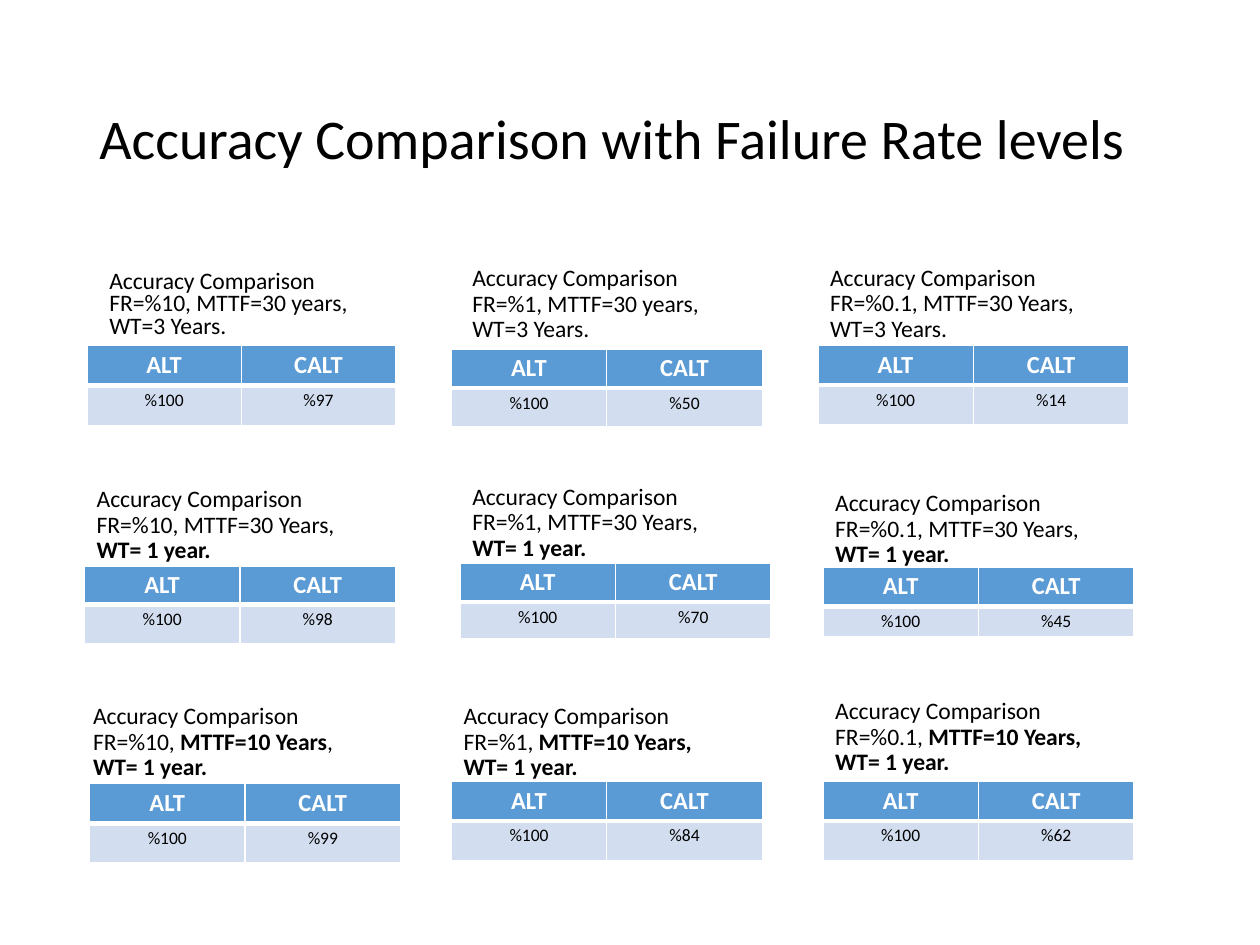
from collections import namedtuple

from lxml.etree import SubElement
from pptx import Presentation
from pptx.dml.color import RGBColor
from pptx.enum.text import MSO_ANCHOR as Anchor, PP_ALIGN as Align
from pptx.oxml.ns import qn
from pptx.util import Pt

FONT = "Calibri"
BLACK, WHITE, HEADER_BLUE, BODY_BLUE = "000000", "FFFFFF", "5B9BD5", "D2DEEF"

Box = namedtuple("Box", "left top width height")
# caption_runs alternate between regular and bold
Comparison = namedtuple(
    "Comparison",
    "caption_runs caption_box table_box calt header_share anchor spacing",
    defaults=(0.5, Anchor.TOP, 0.9))

COMPARISONS = [
    # Top row
    Comparison(["Accuracy Comparison FR=%10, MTTF=30 years, WT=3 Years."],
               Box(55.4, 148.3, 170.6, 49), Box(49.7, 197.3, 176.4, 46),
               "%97", anchor=Anchor.BOTTOM, spacing=0.8),
    Comparison(["Accuracy Comparison FR=%1, MTTF=30 years, WT=3 Years."],
               Box(262.8, 178.6, 157.7, 20.9), Box(257.8, 199.4, 177.8, 44.6),
               "%50", anchor=Anchor.BOTTOM),
    Comparison(["Accuracy Comparison FR=%0.1, MTTF=30 Years, WT=3 Years."],
               Box(467.3, 148.3, 177.8, 45.4), Box(467.3, 197.3, 177.8, 45.4), "%14"),
    # Middle row
    Comparison(["Accuracy Comparison FR=%10, MTTF=30 Years, ", "WT= 1 year."],
               Box(48.2, 275, 177.8, 46.8), Box(48.2, 323.3, 177.8, 44.6), "%98"),
    Comparison(["Accuracy Comparison FR=%1, MTTF=30 Years, ", "WT= 1 year."],
               Box(262.8, 273.6, 163.4, 31), Box(262.8, 321.8, 177.8, 43.5),
               "%70", header_share=0.51),
    Comparison(["Accuracy Comparison FR=%0.1, MTTF=30 Years, ", "WT= 1 year."],
               Box(470.2, 277.2, 177.8, 31), Box(470.2, 324, 177.8, 40),
               "%45", header_share=0.56),
    # Bottom row
    Comparison(["Accuracy Comparison FR=%10, ", "MTTF=10 Years", ", ", "WT= 1 year."],
               Box(46.1, 398.9, 177.8, 33.1), Box(51.1, 447.8, 177.8, 45.4), "%99"),
    Comparison(["Accuracy Comparison FR=%1, ", "MTTF=10 Years, WT= 1 year."],
               Box(257.8, 398.9, 167.8, 33.1), Box(257.8, 446.4, 177.8, 45.4), "%84"),
    Comparison(["Accuracy Comparison FR=%0.1, ", "MTTF=10 Years, WT= 1 year."],
               Box(470.2, 396, 177.8, 33.1), Box(470.2, 446.4, 177.8, 45.4), "%62"),
]


def color(hex_code):
    return RGBColor.from_string(hex_code)


def set_font(font, size, hex_code):
    font.name, font.size = FONT, Pt(size)
    font.color.rgb = color(hex_code)


def add_text(slide, box, runs, size, anchor, spacing):
    frame = slide.shapes.add_textbox(*map(Pt, box)).text_frame
    frame.word_wrap = True
    frame.vertical_anchor = anchor
    paragraph = frame.paragraphs[0]
    paragraph.line_spacing = spacing
    set_font(paragraph.font, size, BLACK)
    for index, wording in enumerate(runs):
        run = paragraph.add_run()
        run.text = wording
        if index % 2:
            run.font.bold = True
    return paragraph


def set_borders(cell, widths):
    """Draw white borders; the schema wants them ahead of the fill."""
    properties = cell._tc.get_or_add_tcPr()
    for side, width in widths.items():
        line = SubElement(properties, qn(f"a:ln{side}"), w=str(Pt(width)))
        fill = SubElement(line, qn("a:solidFill"))
        SubElement(fill, qn("a:srgbClr"), val=WHITE)


def style_cell(cell, wording, is_header):
    cell.text = wording
    cell.margin_left = cell.margin_right = Pt(5.2)
    cell.margin_top = cell.margin_bottom = Pt(2.6)
    paragraph = cell.text_frame.paragraphs[0]
    paragraph.alignment = Align.CENTER
    set_font(paragraph.font, 14 if is_header else 10, WHITE if is_header else BLACK)
    paragraph.font.bold = is_header
    set_borders(cell, {"L": 1, "R": 1, "T": 1 if is_header else 3,
                       "B": 3 if is_header else 1})
    cell.fill.solid()
    cell.fill.fore_color.rgb = color(HEADER_BLUE if is_header else BODY_BLUE)


def add_accuracy_table(slide, box, calt, header_share):
    rows = [("ALT", "CALT"), ("%100", calt)]
    table = slide.shapes.add_table(2, 2, *map(Pt, box)).table
    table.horz_banding = False
    for row, share in zip(table.rows, (header_share, 1 - header_share)):
        row.height = Pt(box.height * share)
    for r, values in enumerate(rows):
        for c, value in enumerate(values):
            style_cell(table.cell(r, c), value, is_header=r == 0)


def add_comparison(slide, item):
    caption = add_text(slide, item.caption_box, item.caption_runs, 13.5,
                       item.anchor, item.spacing)
    caption.space_before = Pt(10)
    add_accuracy_table(slide, item.table_box, item.calt, item.header_share)


def main():
    deck = Presentation()
    deck.slide_width, deck.slide_height = Pt(720), Pt(540)
    slide = deck.slides.add_slide(deck.slide_layouts[6])

    # Title
    add_text(slide, Box(49.7, 28.8, 620.6, 104.4),
             ["Accuracy Comparison with Failure Rate levels"], 32, Anchor.MIDDLE, 0.9)

    # Captioned tables
    for item in COMPARISONS:
        add_comparison(slide, item)

    deck.save("out.pptx")


if __name__ == "__main__":
    main()
